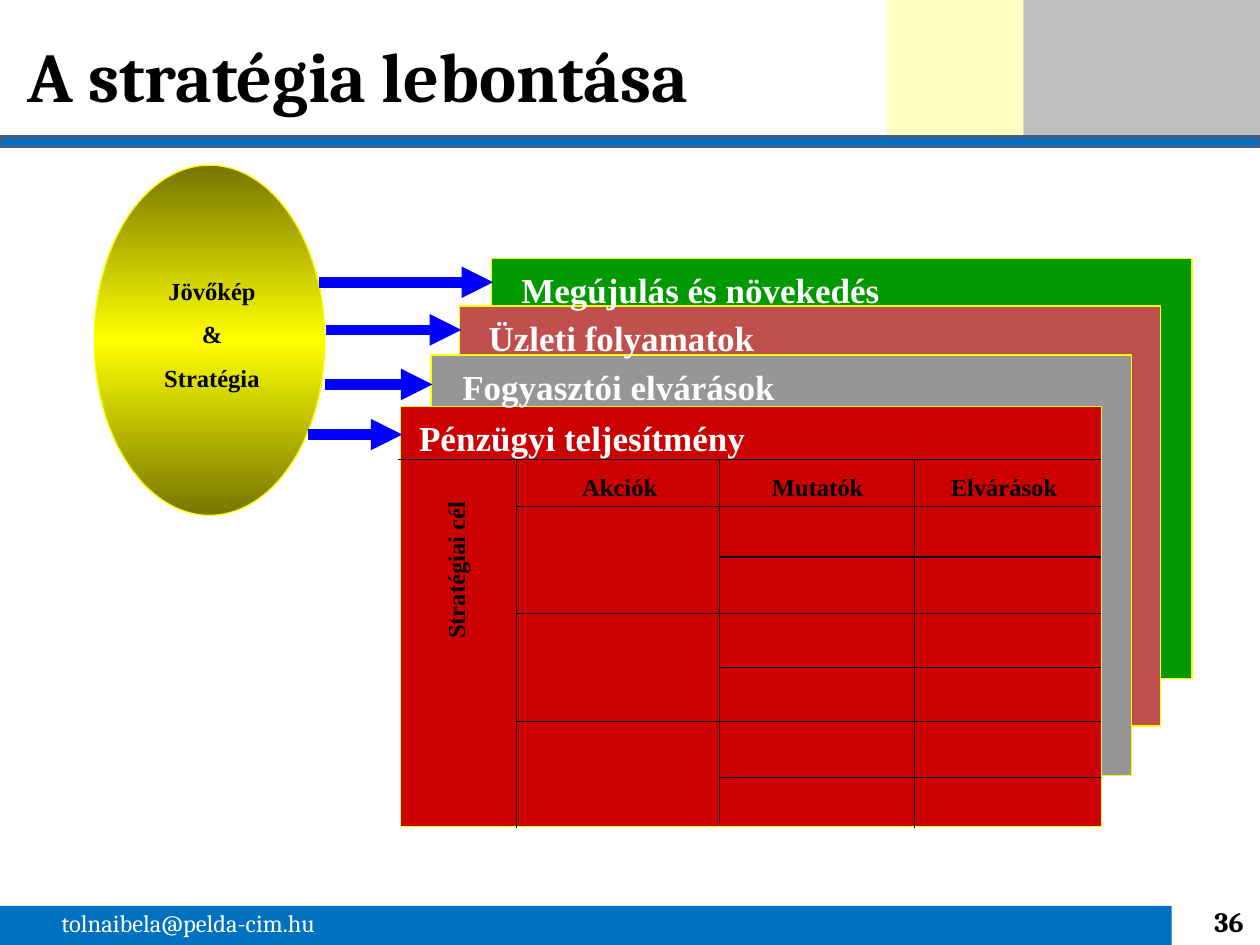
from copy import deepcopy
from lxml.etree import SubElement
from pptx import Presentation
from pptx.dml.color import RGBColor
from pptx.enum.shapes import MSO_CONNECTOR, MSO_SHAPE
from pptx.enum.text import MSO_ANCHOR, PP_ALIGN
from pptx.oxml.ns import qn
from pptx.util import Cm, Pt

rgb = RGBColor.from_string
LEFT, MID, RIGHT = PP_ALIGN.LEFT, PP_ALIGN.CENTER, PP_ALIGN.RIGHT
SERIF, TIMES = "Cambria", "Times New Roman"

deck = Presentation()
deck.slide_width, deck.slide_height = Cm(25.4), Cm(19.05)
slide = deck.slides.add_slide(deck.slide_layouts[6])
shapes = slide.shapes


def block(x, y, w, h, fill, line=None, width=0.75, kind=MSO_SHAPE.RECTANGLE):
    shape = shapes.add_shape(kind, Cm(x), Cm(y), Cm(w), Cm(h))
    shape.shadow.inherit = False
    shape.fill.solid()
    shape.fill.fore_color.rgb = rgb(fill)
    if line:
        shape.line.color.rgb = rgb(line)
        shape.line.width = Pt(width)
    else:
        shape.line.fill.background()
    return shape


def label(words, x, y, w, h, size, color="000000", font=TIMES, bold=True,
          align=LEFT, anchor=MSO_ANCHOR.TOP):
    box = shapes.add_textbox(Cm(x), Cm(y), Cm(w), Cm(h))
    frame = box.text_frame
    frame.word_wrap = True
    frame.vertical_anchor = anchor
    frame.text = words
    for i, para in enumerate(frame.paragraphs):
        para.alignment = align
        para.space_before = Pt(8 if i else 0)
        para.font.name = font
        para.font.size = Pt(size)
        para.font.bold = bold
        para.font.color.rgb = rgb(color)
    return box


block(0, 18.26, 23.62, 0.79, "0070C0")
label("36", 23.62, 18.06, 1.7, 1.02, 16, font=SERIF, align=RIGHT,
      anchor=MSO_ANCHOR.MIDDLE)
label("tolnaibela@pelda-cim.hu", 0.99, 18.19, 6.93, 0.86, 14, "FFFFFF", SERIF, False)
block(20.63, 0, 4.77, 2.76, "BFBFBF")
pale = block(17.86, 0, 2.77, 2.76, "FFFF00")
tint = pale.element.spPr.find(qn("a:solidFill"))[0]
SubElement(tint, qn("a:alpha")).set("val", "24000")
block(0, 2.76, 25.4, 0.2, "0070C0", "3A5F8C", 2)
label("A stratégia lebontása", 0.3, 0.41, 24.2, 2.18, 40, font=SERIF,
      anchor=MSO_ANCHOR.MIDDLE)

oval = block(1.9, 3.33, 4.65, 7.06, "FFFF00", "FFFF00", kind=MSO_SHAPE.OVAL)
oval.fill.gradient()
oval.fill.gradient_angle = 90
first, second = oval.fill.gradient_stops
first.color.rgb, first.position = rgb("767600"), 0
second.color.rgb, second.position = rgb("FFFF00"), 0.5
stops = oval.element.spPr.find(qn("a:gradFill")).find(qn("a:gsLst"))
last = deepcopy(stops[0])
last.set("pos", "100000")
stops.append(last)
label("Jövőkép\n&\nStratégia", 2.08, 5.44, 4.39, 2.64, 14, align=MID)

panels = [
    ("Megújulás és növekedés", 9.91, 5.21, "009900", 10.26, 6.43, 5.69),
    ("Üzleti folyamatok", 9.27, 6.17, "C0504D", 9.6, 6.58, 6.65),
    ("Fogyasztói elvárások", 8.69, 7.16, "969696", 9.07, 6.55, 7.75),
    ("Pénzügyi teljesítmény", 8.08, 8.2, "CC0000", 8.2, 6.2, 8.76),
]
for name, x, y, fill, inset, start, level in panels:
    block(x, y, 14.12, 8.47, fill, "FFFF00")
for name, x, y, fill, inset, start, level in panels:
    label(name, inset, y + 0.08, 10.8, 1.09, 20, "FFFFFF")

for name, x, w in [("Akciók", 11.1, 2.79), ("Mutatók", 15.09, 2.79),
                   ("Elvárások", 18.59, 3.3)]:
    label(name, x, 9.4, w, 0.84, 14, align=MID)
label("Stratégiai cél", 7.39, 10.92, 3.58, 0.84, 14).rotation = 270

rows = [(8.03, 9.27), (10.41, 10.21), (14.5, 11.23), (10.41, 12.37),
        (14.5, 13.46), (10.41, 14.55), (14.5, 15.67)]
lines = [(x, y, 22.2, y, "000000", 0.75) for x, y in rows]
lines += [(x, 9.27, x, end, "000000", 0.75)
          for x, end in [(10.41, 16.69), (14.5, 16.61), (18.44, 16.69)]]
lines += [(start, level, x + 0.03, level, "0000FF", 6)
          for name, x, y, fill, inset, start, level in panels]
for x, y, right, low, color, width in lines:
    line = shapes.add_connector(MSO_CONNECTOR.STRAIGHT, Cm(x), Cm(y), Cm(right), Cm(low))
    line.line.color.rgb = rgb(color)
    line.line.width = Pt(width)
    if width == 6:
        SubElement(line.line._get_or_add_ln(), qn("a:tailEnd")).set("type", "triangle")
    SubElement(line.element.spPr, qn("a:effectLst"))

deck.save("out.pptx")
